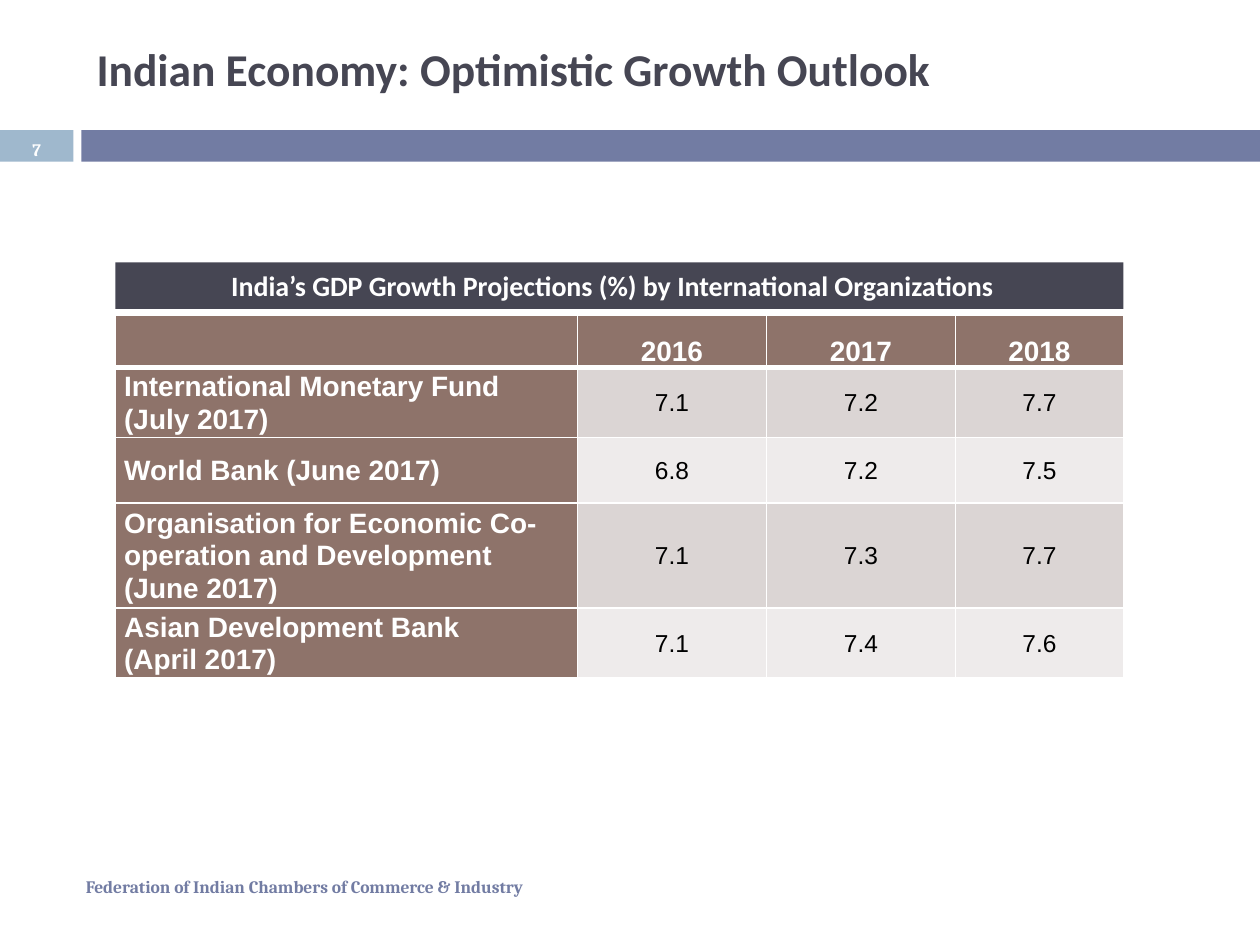
from lxml import etree
from pptx import Presentation
from pptx.dml.color import RGBColor
from pptx.enum import shapes, text
from pptx.oxml import ns
from pptx.util import Pt

COLORS = {
    "ink": "464653", "bar": "727CA3", "tab": "9FB8CD", "head": "8E736A",
    "odd": "DBD5D4", "even": "EEEBEB", "white": "FFFFFF", "black": "000000",
}
CENTER = text.PP_ALIGN.CENTER
MIDDLE = text.MSO_ANCHOR.MIDDLE
BOTTOM = text.MSO_ANCHOR.BOTTOM

YEARS = ["", "2016", "2017", "2018"]
PROJECTIONS = [
    ["International Monetary Fund\n(July 2017)", "7.1", "7.2", "7.7"],
    ["World Bank (June 2017)", "6.8", "7.2", "7.5"],
    ["Organisation for Economic Co-operation and Development (June 2017)", "7.1", "7.3", "7.7"],
    ["Asian Development Bank\n(April 2017)", "7.1", "7.4", "7.6"],
]
COLUMN_WIDTHS = [264, 108, 108, 96]
ROW_HEIGHTS = [30, 40, 37.5, 60, 40]


def color(name):
    return RGBColor.from_string(COLORS[name])


def write(frame, words, *, size, font, ink, bold=True, align=text.PP_ALIGN.LEFT, spacing=None):
    frame.word_wrap = True
    frame.text = words
    for paragraph in frame.paragraphs:
        paragraph.alignment = align
        paragraph.line_spacing = spacing
        for span in paragraph.runs:
            span.font.size = Pt(size)
            span.font.name = font
            span.font.bold = bold
            span.font.color.rgb = color(ink)


def add_border(cell, side, width):
    properties = cell._tc.get_or_add_tcPr()
    line = etree.SubElement(properties, ns.qn(f"a:ln{side}"), w=str(Pt(width)))
    fill = etree.SubElement(line, ns.qn("a:solidFill"))
    etree.SubElement(fill, ns.qn("a:srgbClr"), val=COLORS["white"])


class Slide:
    heading_font = "Calibri"
    table_font = "Arial"
    small_font = "Cambria"

    def __init__(self, deck):
        self.page = deck.slides.add_slide(deck.slide_layouts[5])

    def title(self, words, *place):
        box = self.page.shapes.title
        box.left, box.top, box.width, box.height = map(Pt, place)
        write(box.text_frame, words, size=26, font=self.heading_font, ink="ink")
        box.text_frame.vertical_anchor = MIDDLE

    def bar(self, fill, *place):
        box = self.page.shapes.add_shape(shapes.MSO_SHAPE.RECTANGLE, *map(Pt, place))
        box.shadow.inherit = False
        box.fill.solid()
        box.fill.fore_color.rgb = color(fill)
        box.line.fill.background()
        return box

    def caption(self, words, *place):
        frame = self.bar("ink", *place).text_frame
        frame.margin_right = Pt(15)
        frame.vertical_anchor = MIDDLE
        write(frame, words, size=16, font=self.heading_font, ink="white", align=CENTER)

    def label(self, words, *place, **style):
        frame = self.page.shapes.add_textbox(*map(Pt, place)).text_frame
        frame.vertical_anchor = MIDDLE
        write(frame, words, size=10, font=self.small_font, **style)

    def table(self, rows, left, top):
        grid = self.page.shapes.add_table(
            len(rows), len(rows[0]), Pt(left), Pt(top),
            Pt(sum(COLUMN_WIDTHS)), Pt(sum(ROW_HEIGHTS))).table
        for column, width in zip(grid.columns, COLUMN_WIDTHS):
            column.width = Pt(width)
        for row, height in zip(grid.rows, ROW_HEIGHTS):
            row.height = Pt(height)
        for r, values in enumerate(rows):
            for c, value in enumerate(values):
                self.cell(grid.cell(r, c), value, r, c)

    def cell(self, cell, value, r, c):
        heading = r == 0 or c == 0
        # The rule under the header row is thicker than the others
        widths = {"L": 1, "R": 1, "T": 3 if r == 1 else 1, "B": 3 if r == 0 else 1}
        for side, width in widths.items():
            add_border(cell, side, width)
        cell.fill.solid()
        cell.fill.fore_color.rgb = color("head" if heading else "odd" if r % 2 else "even")
        cell.margin_left = cell.margin_right = Pt(5)
        cell.margin_top = cell.margin_bottom = Pt(0)
        cell.vertical_anchor = MIDDLE if r else BOTTOM
        write(cell.text_frame, value, size=16 if heading else 14, font=self.table_font,
              ink="white" if heading else "black", bold=heading,
              align=CENTER if c else text.PP_ALIGN.LEFT, spacing=1.05)


def main():
    deck = Presentation()
    deck.slide_width, deck.slide_height = Pt(720), Pt(540)
    slide = Slide(deck)

    # Title and divider band
    slide.bar("tab", 0, 74.4, 42, 18)
    slide.bar("bar", 46.5, 74.4, 673.5, 18)
    slide.title("Indian Economy: Optimistic Growth Outlook", 48, 6, 642, 66)

    # Projections table with its caption
    slide.table([YEARS] + PROJECTIONS, 66, 180)
    slide.caption("India’s GDP Growth Projections (%) by International Organizations",
                  66, 150, 576, 26.6)

    # Footer and page number
    slide.label("Federation of Indian Chambers of Commerce & Industry",
                42, 492, 462, 29, ink="bar")
    slide.label("7", 0, 75.6, 42, 19.4, ink="white", align=CENTER)

    deck.save("out.pptx")


if __name__ == "__main__":
    main()
